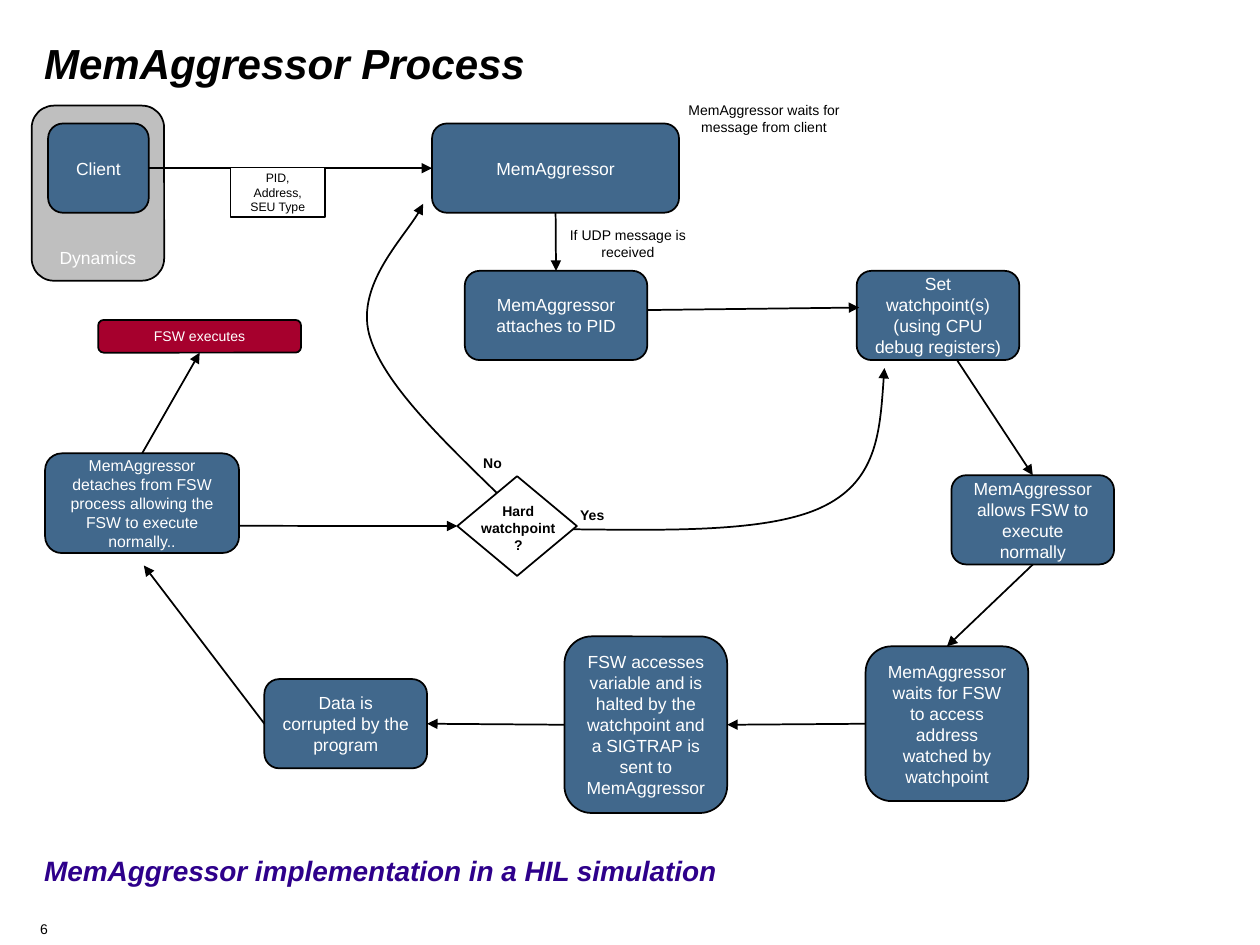
"""Build the MemAggressor process flow slide."""
from lxml.etree import SubElement as Sub
from pptx import Presentation
from pptx.dml.color import RGBColor
from pptx.enum.shapes import MSO_CONNECTOR as Conn, MSO_SHAPE as Kind
from pptx.enum.text import MSO_ANCHOR as Anchor, PP_ALIGN as Align
from pptx.oxml.ns import qn
from pptx.util import Cm, Pt

BLACK, WHITE, BLUE, RED, GREY, PURPLE = (
    "000000", "FFFFFF", "41688C", "A6002D", "BFBFBF", "2E008B")
TOP, LEFT, BOTTOM, RIGHT = range(4)

CURVES = [
    [(11.46, 10.67), (13.51, 10.69), (15.57, 10.74), (16.64, 10.19),
     (17.7, 9.65), (17.75, 8.53), (17.83, 7.42)],
    [(10.06, 9.98), (8.89, 8.84), (7.7, 7.7), (7.44, 6.73),
     (7.19, 5.74), (8.33, 4.6), (8.53, 4.11)],
]
STEPS = {
    "client": ("Client", (0.97, 2.49, 2.03, 1.8)),
    "main": ("MemAggressor", (8.71, 2.49, 4.98, 1.8)),
    "attach": ("MemAggressor attaches to PID", (9.37, 5.46, 3.68, 1.8)),
    "set": ("Set watchpoint(s) (using CPU debug registers)",
            (17.27, 5.46, 3.28, 1.8)),
    "allow": ("MemAggressor allows FSW to execute normally",
              (19.18, 9.58, 3.28, 1.8)),
    "wait": ("MemAggressor waits for FSW to access address watched by "
             "watchpoint", (17.45, 13.03, 3.28, 3.12)),
    "halt": ("FSW accesses variable and is halted by the watchpoint and "
             "a SIGTRAP is sent to MemAggressor", (11.38, 12.83, 3.28, 3.56)),
    "data": ("Data is corrupted by the program", (5.33, 13.69, 3.28, 1.8)),
    "detach": ("MemAggressor detaches from FSW process allowing the FSW to "
               "execute normally..", (0.91, 9.14, 3.91, 2.01), 9),
    "run": ("FSW executes", (1.98, 6.45, 4.09, 0.66), 8, RED),
}
LINKS = [
    (("client", RIGHT), ("main", LEFT)),
    (("main", BOTTOM), ("attach", TOP)),
    ((13.06, 6.25), (17.32, 6.2)),
    ((19.28, 7.24), ("allow", TOP)),
    (("allow", BOTTOM), ("wait", TOP)),
    (("wait", LEFT), ("halt", RIGHT)),
    (("halt", LEFT), ("data", RIGHT)),
    (("data", LEFT), (2.9, 11.4)),
    ((4.82, 10.6), ("check", LEFT)),
    (("detach", TOP), ("run", BOTTOM)),
]
NOTES = [
    ("If UDP message is received", (11.1, 4.45, 3.12, 0.94), False),
    ("MemAggressor waits for message from client",
     (13.59, 1.93, 3.63, 0.94), False),
    ("Hard watchpoint ?", (9.37, 10.01, 2.16, 1.27), True),
    ("No", (9.37, 9.04, 1.12, 0.61), True),
    ("Yes", (11.38, 10.08, 1.12, 0.61), True),
]
HEADS = [
    ("MemAggressor Process", (0.64, 0.64, 21.97, 1.63), 24, BLACK, True),
    ("MemAggressor implementation in a HIL simulation",
     (0.64, 17.09, 23.55, 1.24), 16, PURPLE, True),
    ("6", (0.56, 18.44, 1.93, 0.61), 8, BLACK, False),
]


def rgb(hue):
    return RGBColor.from_string(hue)


def write(shape, text, size, hue, align=Align.CENTER, anchor=Anchor.MIDDLE,
          bold=False, slant=False):
    frame = shape.text_frame
    frame.word_wrap = True
    frame.vertical_anchor = anchor
    frame.text = text
    for para in frame.paragraphs:
        para.alignment = align
        font = para.font
        font.name, font.size = "Arial", Pt(size)
        font.bold, font.italic = bold, slant
        font.color.rgb = rgb(hue)


def trace(shape, arrow=False):
    shape.line.color.rgb = rgb(BLACK)
    shape.line.width = Pt(1)
    if arrow:
        line = shape._element.spPr.find(qn("a:ln"))
        Sub(line, qn("a:tailEnd"), type="triangle")


def block(kind, spot, fill):
    shape = shapes.add_shape(kind, *map(Cm, spot))
    shape.shadow.inherit = False
    shape.fill.solid()
    shape.fill.fore_color.rgb = rgb(fill)
    trace(shape)
    return shape


def label(text, spot, size, hue, **style):
    box = shapes.add_textbox(*map(Cm, spot))
    write(box, text, size, hue, anchor=Anchor.TOP, **style)


def curve(points):
    start, *rest = [(Cm(x), Cm(y)) for x, y in points]
    pen = shapes.build_freeform(*start)
    pen.add_line_segments(rest, close=False)
    shape = pen.convert_to_shape()
    shape.shadow.inherit = False
    shape.fill.background()
    trace(shape, arrow=True)
    legs = list(shape._element.iter(qn("a:lnTo")))
    for i in range(0, len(legs), 3):
        bend = Sub(legs[i].getparent(), qn("a:cubicBezTo"))
        for leg in legs[i:i + 3]:
            bend.append(leg[0])
            leg.getparent().remove(leg)


def link(start, end):
    wire = shapes.add_connector(Conn.STRAIGHT, 0, 0, 0, 0)
    if start[0] in nodes:
        wire.begin_connect(nodes[start[0]], start[1])
    else:
        wire.begin_x, wire.begin_y = map(Cm, start)
    if end[0] in nodes:
        wire.end_connect(nodes[end[0]], end[1])
    else:
        wire.end_x, wire.end_y = map(Cm, end)
    trace(wire, arrow=True)
    Sub(wire._element.spPr, qn("a:effectLst"))


deck = Presentation()
deck.slide_width, deck.slide_height = Cm(25.4), Cm(19.05)
shapes = deck.slides.add_slide(deck.slide_layouts[6]).shapes
nodes = {}

group = block(Kind.ROUNDED_RECTANGLE, (0.64, 2.13, 2.67, 3.53), GREY)
write(group, "Dynamics", 10, WHITE, anchor=Anchor.BOTTOM)
for points in CURVES:
    curve(points)
for key, (text, spot, *more) in STEPS.items():
    size, fill = more + [10, BLUE][len(more):]
    nodes[key] = block(Kind.ROUNDED_RECTANGLE, spot, fill)
    write(nodes[key], text, size, WHITE)
nodes["check"] = block(Kind.DIAMOND, (9.22, 9.6, 2.41, 2.01), WHITE)
for ends in LINKS:
    link(*ends)
packet = block(Kind.RECTANGLE, (4.65, 3.38, 1.9, 0.99), WHITE)
write(packet, "PID,\nAddress,\nSEU Type", 7, BLACK)
for text, spot, bold in NOTES:
    label(text, spot, 8, BLACK, bold=bold)
for text, spot, size, hue, strong in HEADS:
    label(text, spot, size, hue, align=Align.LEFT, bold=strong, slant=strong)

deck.save("out.pptx")
